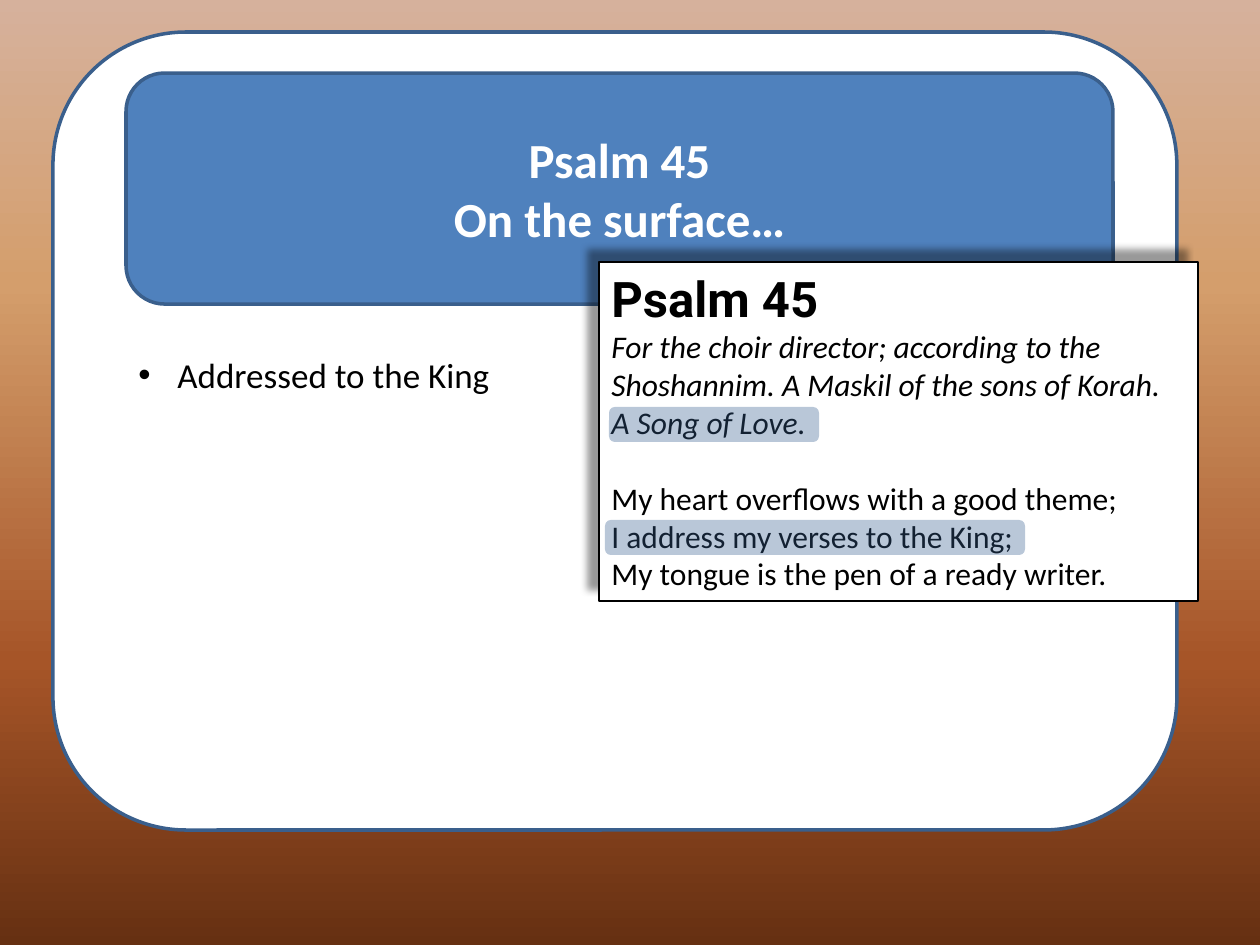
from dataclasses import dataclass

from lxml import etree
from pptx import Presentation
from pptx import util as u
from pptx.dml.color import RGBColor
from pptx.enum import shapes, text
from pptx.oxml import ns

PX_PER_INCH = 126


@dataclass(frozen=True)
class Theme:
    white: str = "FFFFFF"
    black: str = "000000"
    blue: str = "4F81BD"
    border: str = "3A5F8C"
    marker: str = "376092"
    backdrop: tuple = ((0, "D6B19C"), (30, "D49E6C"), (70, "A65528"), (100, "663012"))
    body_font: str = "Calibri"
    heading_font: str = "Roboto"
    heading_size: int = 28
    bullet_size: int = 20
    verse_size: int = 18


THEME = Theme()


def px(n):
    return round(n * u.Inches(1) / PX_PER_INCH)


def sub(parent, tag, **attrs):
    return etree.SubElement(parent, ns.qn(tag), {k: str(v) for k, v in attrs.items()})


def set_backdrop(slide, stops):
    fill = slide.background.fill
    fill.gradient()
    grad = slide.background._cSld.find(".//" + ns.qn("a:gradFill"))
    gs_list = grad.find(ns.qn("a:gsLst"))
    for gs in list(gs_list):
        gs_list.remove(gs)
    for pos, color in stops:
        sub(sub(gs_list, "a:gs", pos=pos * 1000), "a:srgbClr", val=color)
    grad.find(ns.qn("a:lin")).set("ang", "5400000")


def add_box(slide, box, fill, line=None, width=2, rounded=True, alpha=None):
    kind = shapes.MSO_SHAPE.ROUNDED_RECTANGLE if rounded else shapes.MSO_SHAPE.RECTANGLE
    sp = slide.shapes.add_shape(kind, *map(px, box))
    sp.shadow.inherit = False
    sp.fill.solid()
    sp.fill.fore_color.rgb = RGBColor.from_string(fill)
    if alpha is not None:
        color = sp._element.spPr.find(ns.qn("a:solidFill"))[0]
        sub(color, "a:alpha", val=alpha * 1000)
    if line:
        sp.line.color.rgb = RGBColor.from_string(line)
        sp.line.width = u.Pt(width)
    else:
        sp.line.fill.background()
    return sp


def add_shadow(sp, color, alpha, blur, dist, angle):
    effects = sp._element.spPr.find(ns.qn("a:effectLst"))
    shadow = sub(effects, "a:outerShdw", blurRad=u.Pt(blur), dist=u.Pt(dist),
                 dir=angle * 60000, algn="br", rotWithShape=0)
    sub(sub(shadow, "a:srgbClr", val=color), "a:alpha", val=alpha * 1000)


def write(tf, content, size, font=THEME.body_font, color=THEME.black, bold=False,
          italic=False, align=text.PP_ALIGN.LEFT, before=0):
    tf.word_wrap = True
    p = tf.paragraphs[0] if not tf.text else tf.add_paragraph()
    p.alignment = align
    if before:
        p.space_before = u.Pt(before)
    r = p.add_run()
    r.text = content
    r.font.name = font
    r.font.size = u.Pt(size)
    r.font.bold = bold
    r.font.italic = italic
    r.font.color.rgb = RGBColor.from_string(color)
    return p


def add_bullet(p, indent):
    pPr = p._p.get_or_add_pPr()
    pPr.set("marL", str(px(indent)))
    pPr.set("indent", str(-px(indent)))
    sub(pPr, "a:buFont", typeface="Arial")
    sub(pPr, "a:buChar", char="•")


def add_title(slide):
    sp = add_box(slide, (126, 73, 987, 231), THEME.blue, THEME.border)
    sp.text_frame.vertical_anchor = text.MSO_ANCHOR.MIDDLE
    for content in ("Psalm 45", "On the surface…"):
        write(sp.text_frame, content, THEME.heading_size, color=THEME.white,
              bold=True, align=text.PP_ALIGN.CENTER)


def add_points(slide):
    sp = slide.shapes.add_textbox(*map(px, (126, 347, 788, 55)))
    add_bullet(write(sp.text_frame, "Addressed to the King", THEME.bullet_size), 39)


def add_passage(slide):
    sp = add_box(slide, (599, 262, 599, 339), THEME.white, THEME.black, 0.75, rounded=False)
    add_shadow(sp, THEME.black, alpha=40, blur=4, dist=10, angle=225)
    tf = sp.text_frame
    tf.vertical_anchor = text.MSO_ANCHOR.TOP
    size = THEME.verse_size
    write(tf, "Psalm 45", THEME.heading_size, font=THEME.heading_font, bold=True)
    write(tf, "For the choir director; according to the Shoshannim. "
              "A Maskil of the sons of Korah. A Song of Love.", size, italic=True)
    write(tf, "My heart overflows with a good theme;", size, before=22)
    write(tf, "I address my verses to the King;", size)
    write(tf, "My tongue is the pen of a ready writer.", size)


def main():
    prs = Presentation()
    prs.slide_width, prs.slide_height = px(1260), px(945)
    slide = prs.slides.add_slide(prs.slide_layouts[6])
    set_backdrop(slide, THEME.backdrop)
    add_box(slide, (53, 32, 1124, 798), THEME.white, THEME.border)
    add_title(slide)
    add_points(slide)
    add_passage(slide)
    for box in ((605, 520, 420, 35), (609, 407, 210, 35)):
        add_box(slide, box, THEME.marker, alpha=35)
    prs.save("out.pptx")


if __name__ == "__main__":
    main()
